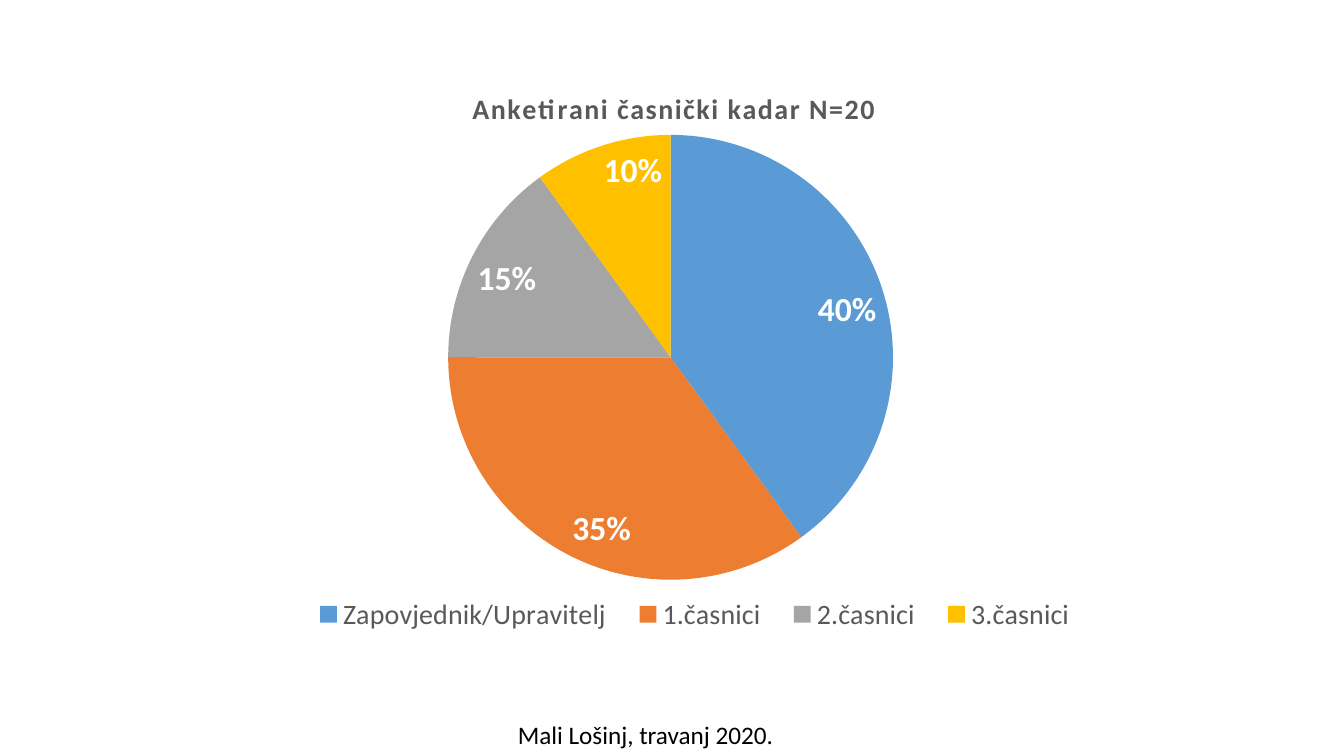
"""Build the slide with the pie chart of surveyed deck officers."""
from dataclasses import dataclass

from lxml.etree import SubElement
from pptx import Presentation
from pptx.chart.chart import Chart
from pptx.chart.data import CategoryChartData
from pptx.dml.color import RGBColor
from pptx.enum.chart import XL_CHART_TYPE as ChartType
from pptx.enum.chart import XL_LABEL_POSITION as LabelPosition
from pptx.enum.chart import XL_LEGEND_POSITION as LegendPosition
from pptx.enum.text import MSO_AUTO_SIZE as AutoSize
from pptx.oxml.ns import qn
from pptx.slide import Slide
from pptx.text.text import Font
from pptx.util import Cm, Pt

COLORS = {
    "blue": "5B9BD5",
    "orange": "ED7D31",
    "gray": "A5A5A5",
    "gold": "FFC000",
    "dark": "595959",
    "black": "000000",
    "white": "FFFFFF",
}


@dataclass(frozen=True)
class Slice:
    rank: str
    share: int
    color: str


@dataclass(frozen=True)
class Box:
    left: float
    top: float
    width: float
    height: float


SLICES = [
    Slice("Zapovjednik/Upravitelj", 40, "blue"),
    Slice("1.časnici", 35, "orange"),
    Slice("2.časnici", 15, "gray"),
    Slice("3.časnici", 10, "gold"),
]
CHART_BOX = Box(3.76, 1.68, 26.44, 14.45)
FOOTER_BOX = Box(12.8, 18.01, 7.01, 1.02)
PIE_AREA = Box(0.285, 0.119, 0.424, 0.776)
LEGEND_AREA = Box(0.14, 0.92, 0.76, 0.07)


def lengths(box: Box) -> tuple[Cm, Cm, Cm, Cm]:
    return Cm(box.left), Cm(box.top), Cm(box.width), Cm(box.height)


def format_font(font: Font, size: int, color: str, bold: bool = False) -> None:
    font.name = "Calibri"
    font.size = Pt(size)
    font.bold = bold
    font.color.rgb = RGBColor.from_string(COLORS[color])


def set_layout(parent, area: Box, index: int, inner: bool = False) -> None:
    for old_layout in parent.findall(qn("c:layout")):
        parent.remove(old_layout)
    layout = SubElement(parent, qn("c:layout"))
    parent.insert(index, layout)
    manual = SubElement(layout, qn("c:manualLayout"))
    settings = {"layoutTarget": "inner"} if inner else {}
    settings |= {"xMode": "edge", "yMode": "edge"}
    settings |= {"x": area.left, "y": area.top, "w": area.width, "h": area.height}
    for tag, value in settings.items():
        SubElement(manual, qn(f"c:{tag}")).set("val", str(value))


def add_title(chart: Chart, text: str) -> None:
    chart.has_title = True
    chart.chart_title.include_in_layout = False
    run = chart.chart_title.text_frame.paragraphs[0].add_run()
    run.text = text
    format_font(run.font, 20, "dark", bold=True)
    run._r.get_or_add_rPr().set("spc", "100")


def add_legend(chart: Chart) -> None:
    chart.has_legend = True
    legend = chart.legend
    legend.position = LegendPosition.TOP
    legend.include_in_layout = False
    format_font(legend.font, 20, "dark")
    set_layout(legend._element, LEGEND_AREA, index=1)


def add_pie(slide: Slide, title: str) -> None:
    data = CategoryChartData()
    data.categories = [item.rank for item in SLICES]
    data.add_series("Series 1", [item.share for item in SLICES])
    frame = slide.shapes.add_chart(ChartType.PIE, *lengths(CHART_BOX), data)
    chart = frame.chart
    format_font(chart.font, 10, "black")
    add_title(chart, title)
    add_legend(chart)
    plot = chart.plots[0]
    plot.vary_by_categories = True
    set_layout(plot._element.getparent(), PIE_AREA, index=0, inner=True)
    for index, item in enumerate(SLICES):
        fill = plot.series[0].points[index].format.fill
        fill.solid()
        fill.fore_color.rgb = RGBColor.from_string(COLORS[item.color])
    plot.has_data_labels = True
    labels = plot.data_labels
    labels.show_percentage = True
    labels.show_value = False
    labels.number_format = "0%"
    labels.number_format_is_linked = False
    labels.position = LabelPosition.INSIDE_END
    format_font(labels.font, 24, "white", bold=True)


def add_text(slide: Slide, text: str, *, box: Box, size: int, color: str) -> None:
    frame = slide.shapes.add_textbox(*lengths(box)).text_frame
    frame.word_wrap = False
    frame.auto_size = AutoSize.SHAPE_TO_FIT_TEXT
    run = frame.paragraphs[0].add_run()
    run.text = text
    format_font(run.font, size, color)


def main() -> None:
    presentation = Presentation()
    presentation.slide_width, presentation.slide_height = Cm(33.87), Cm(19.05)
    slide = presentation.slides.add_slide(presentation.slide_layouts[6])
    add_pie(slide, "Anketirani časnički kadar N=20")
    add_text(slide, "Mali Lošinj, travanj 2020.", box=FOOTER_BOX, size=18, color="black")
    presentation.save("out.pptx")


if __name__ == "__main__":
    main()
